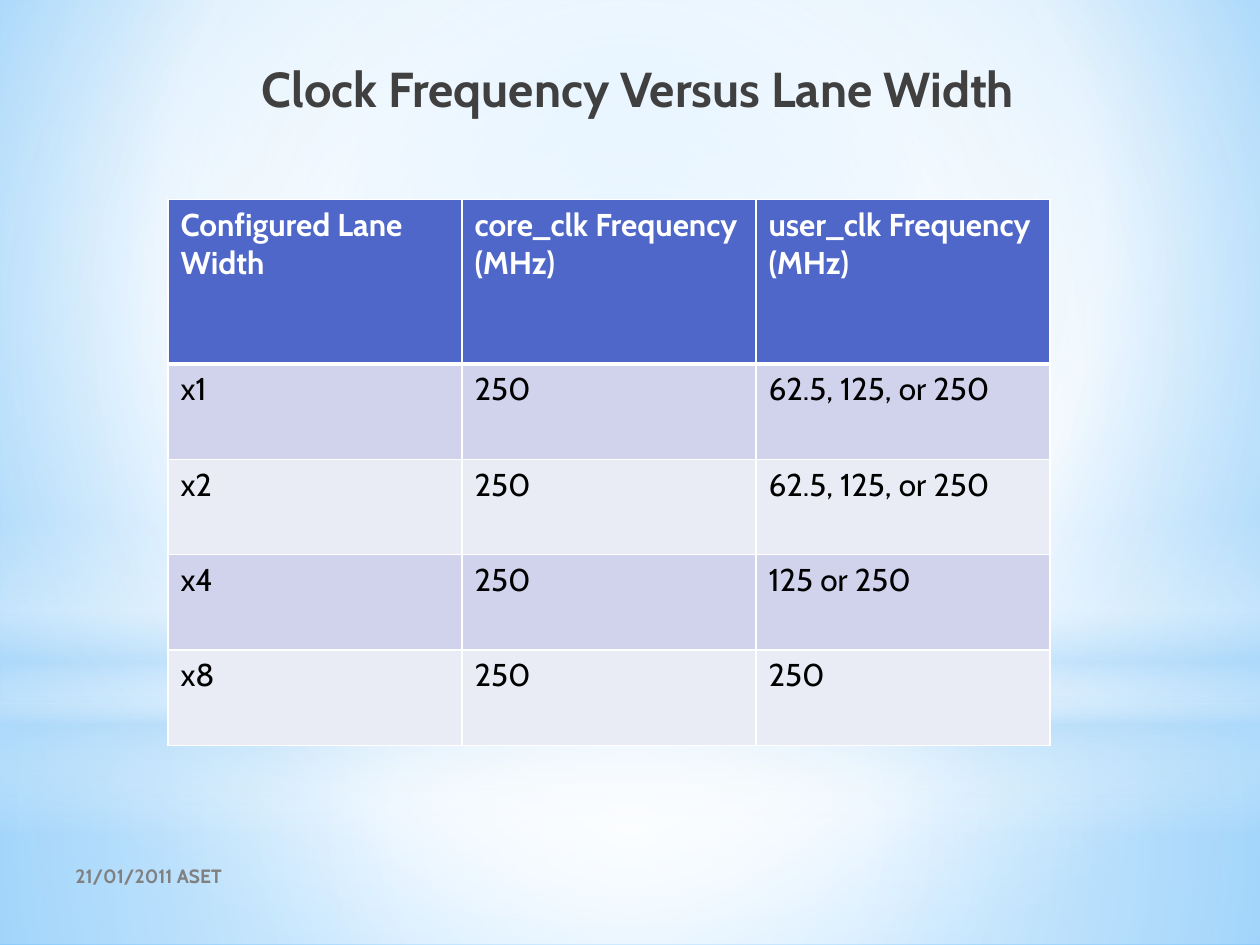
import pptx
import pptx.dml.color
import pptx.enum.shapes
import pptx.enum.text
import pptx.oxml
import pptx.oxml.ns
import pptx.util

Pt = pptx.util.Pt
qn = pptx.oxml.ns.qn
SHAPE = pptx.enum.shapes.MSO_SHAPE
ANCHOR = pptx.enum.text.MSO_ANCHOR
ALIGN = pptx.enum.text.PP_ALIGN

FONT = "Cabin"
WIDTH, HEIGHT = 720, 540
CENTER = (50, 50, 50, 50)

# Stops are (position %, colour, opacity %); focus is left, top, right, bottom %.
BACKDROP = [(0, "9ED5FF", 100), (60, "FFFFFF", 100), (100, "5BB9FF", 100)]
BACKDROP_FOCUS = (20, 10, 20, 60)
GLOWS = [
    (SHAPE.RECTANGLE, (0, 402, WIDTH, 138), CENTER,
     [(0, "FFFFFF", 91), (37, "FFFFFF", 76), (100, "B4DCFA", 79)]),
    (SHAPE.RECTANGLE, (0, 0, WIDTH, 402), CENTER,
     [(0, "FFFFFF", 89), (48, "FFFFFF", 62), (100, "B4DCFA", 79)]),
    (SHAPE.RECTANGLE, (0, 297, WIDTH, 180), None,
     [(0, "FFFFFF", 0), (29, "FFFFFF", 30), (45, "B4DCFA", 40),
      (55, "FFFFFF", 26), (65, "B4DCFA", 60), (100, "FFFFFF", 0)]),
    (SHAPE.OVAL, (0, 126, WIDTH, 402), CENTER,
     [(0, "FFFFFF", 100), (56, "FFFFFF", 0)]),
]

TITLE = "Clock Frequency Versus Lane Width"
FOOTER = "21/01/2011 ASET"
CLOCKS = [
    ("Configured Lane Width", "core_clk Frequency (MHz)", "user_clk Frequency (MHz)"),
    ("x1", "250", "62.5, 125, or 250"),
    ("x2", "250", "62.5, 125, or 250"),
    ("x4", "250", "125 or 250"),
    ("x8", "250", "250"),
]
TABLE_LEFT, TABLE_TOP, COLUMN_WIDTH = 96, 114, 168
HEADER_HEIGHT, ROW_HEIGHT = 94, 54.5
HEADER_FILL, BAND_FILLS = "4E67C8", ("D0D3EB", "E9EBF5")


def rgb(value):
    return pptx.dml.color.RGBColor.from_string(value)


def set_gradient(fill, owner, stops, focus):
    """Fill owner with a circular gradient around focus, or a vertical one without it."""
    fill.solid()
    solid = owner.find(".//" + qn("a:solidFill"))
    stop_xml = "".join(
        f'<a:gs pos="{position * 1000}"><a:srgbClr val="{color}">'
        f'<a:alpha val="{opacity * 1000}"/></a:srgbClr></a:gs>'
        for position, color, opacity in stops)
    if focus:
        left, top, right, bottom = (side * 1000 for side in focus)
        direction = (f'<a:path path="circle"><a:fillToRect l="{left}" t="{top}" '
                     f'r="{right}" b="{bottom}"/></a:path>')
    else:
        direction = '<a:lin ang="5400000" scaled="0"/>'
    gradient = pptx.oxml.parse_xml(
        f'<a:gradFill {pptx.oxml.ns.nsdecls("a")} rotWithShape="1">'
        f'<a:gsLst>{stop_xml}</a:gsLst>{direction}</a:gradFill>')
    solid.getparent().replace(solid, gradient)


def style(paragraph, size, color, bold):
    font = paragraph.font
    font.name, font.size, font.bold = FONT, Pt(size), bold
    font.color.rgb = rgb(color)


def add_text(slide, box, text, size, color, anchor, align):
    frame = slide.shapes.add_textbox(*map(Pt, box)).text_frame
    frame.word_wrap = True
    frame.vertical_anchor = anchor
    paragraph = frame.paragraphs[0]
    paragraph.text = text
    paragraph.alignment = align
    style(paragraph, size, color, True)


def set_borders(cell, top, bottom):
    """Draw white borders, 1 pt wide at the sides."""
    properties = cell._tc.get_or_add_tcPr()
    widths = {"lnL": 1, "lnR": 1, "lnT": top, "lnB": bottom}
    for index, (side, width) in enumerate(widths.items()):
        properties.insert(index, pptx.oxml.parse_xml(
            f'<a:{side} {pptx.oxml.ns.nsdecls("a")} w="{Pt(width)}"><a:solidFill>'
            f'<a:srgbClr val="FFFFFF"/></a:solidFill></a:{side}>'))


def add_clock_table(slide):
    rows, columns = len(CLOCKS), len(CLOCKS[0])
    height = HEADER_HEIGHT + ROW_HEIGHT * (rows - 1)
    table = slide.shapes.add_table(
        rows, columns, Pt(TABLE_LEFT), Pt(TABLE_TOP),
        Pt(COLUMN_WIDTH * columns), Pt(height)).table
    for column in table.columns:
        column.width = Pt(COLUMN_WIDTH)
    for r, values in enumerate(CLOCKS):
        header = r == 0
        table.rows[r].height = Pt(HEADER_HEIGHT if header else ROW_HEIGHT)
        for c, value in enumerate(values):
            cell = table.cell(r, c)
            cell.text = value
            cell.fill.solid()
            cell.fill.fore_color.rgb = rgb(HEADER_FILL if header else BAND_FILLS[(r - 1) % 2])
            style(cell.text_frame.paragraphs[0], 18, "FFFFFF" if header else "000000", header)
            set_borders(cell, top=3 if r == 1 else 1, bottom=3 if header else 1)


def main():
    deck = pptx.Presentation()
    deck.slide_width, deck.slide_height = Pt(WIDTH), Pt(HEIGHT)
    slide = deck.slides.add_slide(deck.slide_layouts[6])
    set_gradient(slide.background.fill, slide.element, BACKDROP, BACKDROP_FOCUS)
    for kind, box, focus, stops in GLOWS:
        glow = slide.shapes.add_shape(kind, *map(Pt, box))
        glow.shadow.inherit = False
        set_gradient(glow.fill, glow.element, stops, focus)
        glow.line.fill.background()
    add_text(slide, (36, 486, 264, 29), FOOTER, 11, "808080", ANCHOR.MIDDLE, ALIGN.LEFT)
    add_text(slide, (108, 30, 513, 90), TITLE, 28, "404040", ANCHOR.TOP, ALIGN.CENTER)
    add_clock_table(slide)
    deck.save("out.pptx")


if __name__ == "__main__":
    main()
